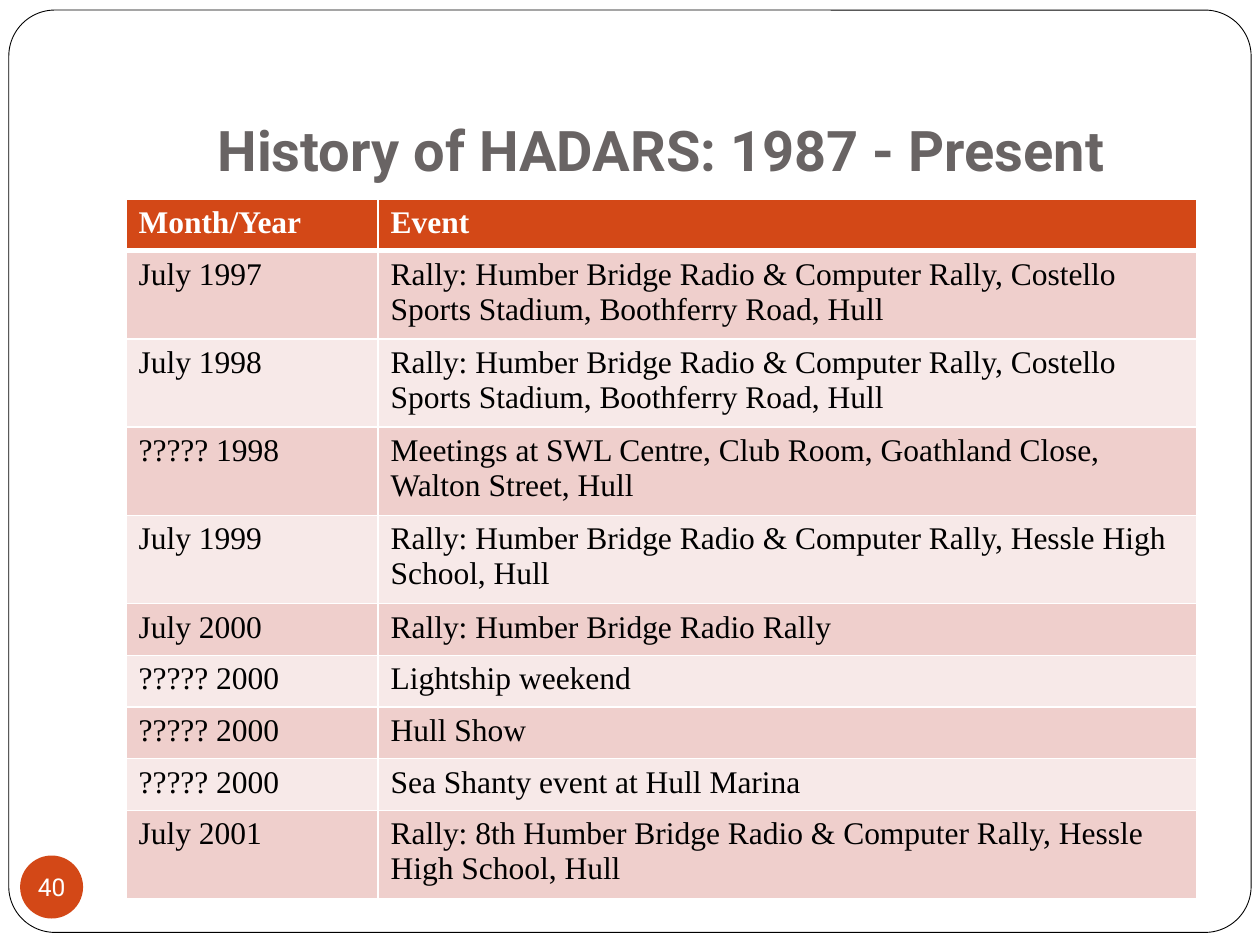
from typing import NamedTuple

from lxml.etree import SubElement
from pptx import Presentation
from pptx.dml.color import RGBColor
from pptx.enum.shapes import MSO_SHAPE as Shape
from pptx.enum.text import MSO_ANCHOR as Anchor, PP_ALIGN as Align
from pptx.oxml.ns import qn
from pptx.util import Inches, Pt

COLORS = {
    "white": "FFFFFF",
    "black": "000000",
    "title": "696464",
    "accent": "D34817",
    "odd_row": "EFCFCC",
    "even_row": "F7E9E8",
}
HEADING_FONT = "Roboto"
BODY_FONT = "Times New Roman"
ROW_HEIGHT = 0.41


class Event(NamedTuple):
    date: str
    description: str


HEADER = Event("Month/Year", "Event")
STADIUM_RALLY = ("Rally: Humber Bridge Radio & Computer Rally, Costello "
                 "Sports Stadium, Boothferry Road, Hull")
EVENTS = [
    Event("July 1997", STADIUM_RALLY),
    Event("July 1998", STADIUM_RALLY),
    Event("????? 1998", "Meetings at SWL Centre, Club Room, Goathland Close, "
                        "Walton Street, Hull"),
    Event("July 1999", "Rally: Humber Bridge Radio & Computer Rally, "
                       "Hessle High School, Hull"),
    Event("July 2000", "Rally: Humber Bridge Radio Rally"),
    Event("????? 2000", "Lightship weekend"),
    Event("????? 2000", "Hull Show"),
    Event("????? 2000", "Sea Shanty event at Hull Marina"),
    Event("July 2001", "Rally: 8th Humber Bridge Radio & Computer Rally, "
                       "Hessle High School, Hull"),
]


def rgb(name: str) -> RGBColor:
    return RGBColor.from_string(COLORS[name])


def add_text(paragraph, text: str, font_name: str, size: int, color: str,
             bold: bool = False) -> None:
    run = paragraph.add_run()
    run.text = text
    run.font.name = font_name
    run.font.size = Pt(size)
    run.font.bold = bold
    run.font.color.rgb = rgb(color)


def add_filled_shape(slide, kind, left: float, top: float, width: float,
                     height: float, fill: str):
    shape = slide.shapes.add_shape(kind, Inches(left), Inches(top),
                                   Inches(width), Inches(height))
    shape.shadow.inherit = False
    shape.fill.solid()
    shape.fill.fore_color.rgb = rgb(fill)
    shape.line.fill.background()
    return shape


def set_borders(cell, bottom_width: int) -> None:
    properties = cell._tc.get_or_add_tcPr()
    widths = {"a:lnL": 1, "a:lnR": 1, "a:lnT": 1, "a:lnB": bottom_width}
    for tag, width in widths.items():
        line = SubElement(properties, qn(tag), w=str(Pt(width)))
        fill = SubElement(line, qn("a:solidFill"))
        SubElement(fill, qn("a:srgbClr"), val=COLORS["white"])


def add_event_table(slide) -> None:
    rows = [HEADER] + EVENTS
    table = slide.shapes.add_table(
        len(rows), 2, Inches(1), Inches(1.58), Inches(8.5),
        Inches(ROW_HEIGHT * len(rows))).table
    table.columns[0].width = Inches(2)
    table.columns[1].width = Inches(6.5)
    for index, event in enumerate(rows):
        is_header = index == 0
        row_fill = "accent" if is_header else (
            "odd_row" if index % 2 else "even_row")
        for cell, text in zip(table.rows[index].cells, event):
            set_borders(cell, 3 if is_header else 1)
            cell.fill.solid()
            cell.fill.fore_color.rgb = rgb(row_fill)
            add_text(cell.text_frame.paragraphs[0], text, BODY_FONT, 18,
                     "white" if is_header else "black", is_header)


def main() -> None:
    presentation = Presentation()
    presentation.slide_width = Inches(10)
    presentation.slide_height = Inches(7.5)
    slide = presentation.slides.add_slide(presentation.slide_layouts[6])

    # Rounded page frame
    frame = add_filled_shape(slide, Shape.ROUNDED_RECTANGLE,
                             0.07, 0.08, 9.86, 7.32, "white")
    frame.adjustments[0] = 0.05
    frame.line.color.rgb = rgb("black")
    frame.line.width = Pt(0.5)

    # Title
    title = slide.shapes.add_textbox(Inches(1), Inches(0.3),
                                     Inches(8.5), Inches(1.25)).text_frame
    title.word_wrap = True
    title.vertical_anchor = Anchor.BOTTOM
    title.margin_bottom = Inches(0.1)
    title.paragraphs[0].alignment = Align.CENTER
    add_text(title.paragraphs[0], "History of HADARS: 1987 - Present",
             HEADING_FONT, 32, "title", bold=True)

    # Events by date
    add_event_table(slide)

    # Page number badge
    badge = add_filled_shape(slide, Shape.OVAL, 0.16, 6.79, 0.5, 0.5, "accent")
    number = badge.text_frame
    number.word_wrap = False
    number.vertical_anchor = Anchor.MIDDLE
    number.margin_left = number.margin_right = 0
    number.margin_top = number.margin_bottom = 0
    number.paragraphs[0].alignment = Align.CENTER
    add_text(number.paragraphs[0], "40", HEADING_FONT, 14, "white")

    presentation.save("out.pptx")


if __name__ == "__main__":
    main()
